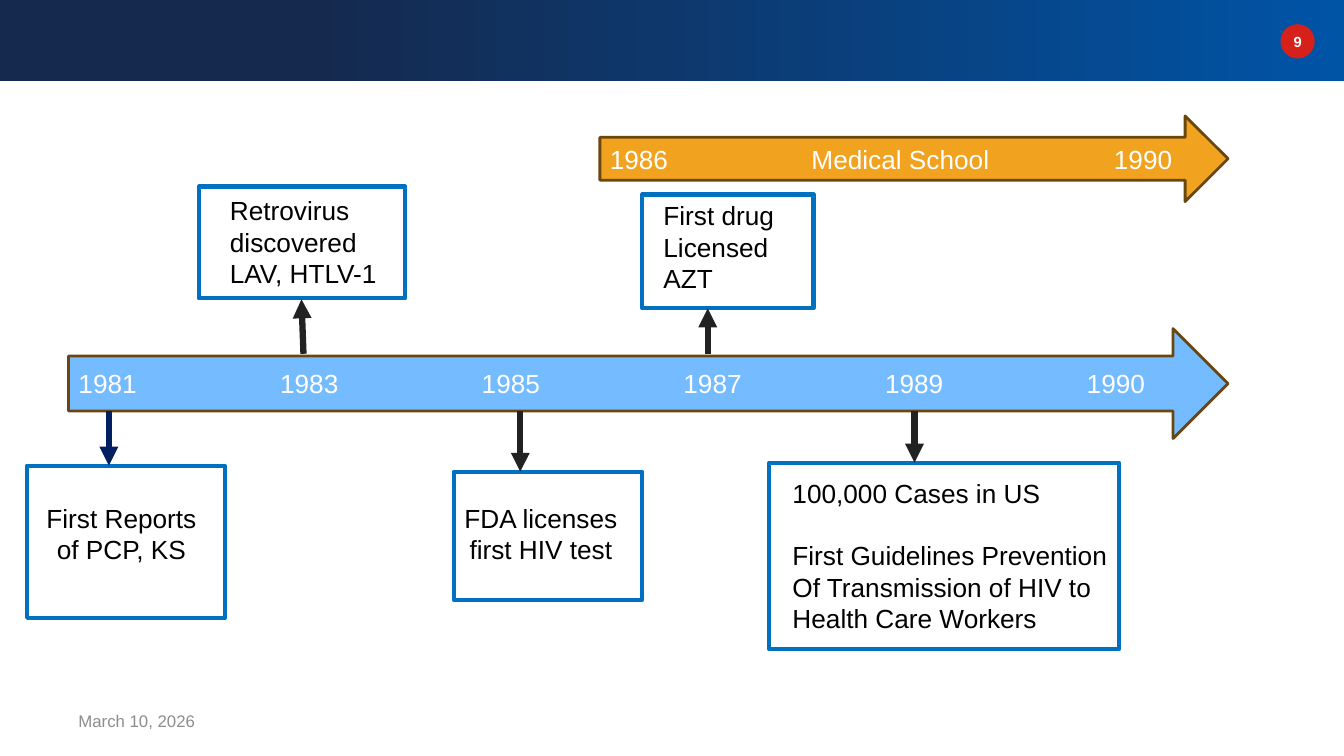
from lxml import etree
from pptx import Presentation
from pptx.dml.color import RGBColor
from pptx.enum import shapes as sh, text as tx
from pptx.oxml.ns import qn
from pptx.util import Inches, Pt

BODY_SIZE = 18.7
BLACK, WHITE, INK = "000000", "FFFFFF", "222222"
AXIS_TOP, AXIS_BOTTOM = 3.51, 4.08
LEFT, CENTER = tx.PP_ALIGN.LEFT, tx.PP_ALIGN.CENTER


def rgb(value):
    return RGBColor.from_string(value)


def add_shape(slide, kind, at, fill=None, line=None, width=0):
    shape = slide.shapes.add_shape(kind, *map(Inches, at))
    shape.shadow.inherit = False
    if fill:
        shape.fill.solid()
        shape.fill.fore_color.rgb = rgb(fill)
    else:
        shape.fill.background()
    if line:
        shape.line.color.rgb = rgb(line)
        shape.line.width = Pt(width)
    else:
        shape.line.fill.background()
    return shape


def write(shape, lines, size, color, align=LEFT, anchor=tx.MSO_ANCHOR.MIDDLE,
          margins=(0.1, 0.05, 0.1, 0.05), bold=False):
    frame = shape.text_frame
    frame.word_wrap = True
    frame.vertical_anchor = anchor
    (frame.margin_left, frame.margin_top,
     frame.margin_right, frame.margin_bottom) = map(Inches, margins)
    frame.text = "\n".join(lines)
    for paragraph in frame.paragraphs:
        paragraph.alignment = align
        font = paragraph.font
        font.name, font.size, font.bold = "Arial", Pt(size), bold
        font.color.rgb = rgb(color)
    return frame


def add_header(slide, number):
    band = add_shape(slide, sh.MSO_SHAPE.RECTANGLE, (0, 0, 13.33, 0.8))
    band.fill.gradient()
    band.fill.gradient_angle = 0
    stops = ((0.23, "15294E"), (1, "0054A6"))
    for stop, (position, color) in zip(band.fill.gradient_stops, stops):
        stop.position = position
        stop.color.rgb = rgb(color)
    badge = add_shape(slide, sh.MSO_SHAPE.OVAL, (12.7, 0.24, 0.34, 0.34), "D6201A")
    write(badge, [number], 10.5, WHITE, CENTER, margins=(0, 0, 0, 0), bold=True)


def add_date(slide, date):
    box = slide.shapes.add_textbox(*map(Inches, (0.68, 6.95, 3, 0.4)))
    write(box, [date], 12, "8D8D8D")


def add_period(slide, at, fill, labels, tab_stops):
    """Block arrow whose labels sit on tab stops."""
    arrow = add_shape(slide, sh.MSO_SHAPE.RIGHT_ARROW, at, fill, "6A470E", 2)
    arrow.text_frame.text = "\t".join(labels)
    properties = arrow.text_frame.paragraphs[0]._p.get_or_add_pPr()
    tabs = etree.SubElement(properties, qn("a:tabLst"))
    for stop in tab_stops:
        etree.SubElement(tabs, qn("a:tab"), pos=str(Inches(stop)), algn="l")
    frame = arrow.text_frame
    frame.word_wrap = True
    frame.vertical_anchor = tx.MSO_ANCHOR.MIDDLE
    paragraph = frame.paragraphs[0]
    paragraph.alignment = LEFT
    paragraph.font.name, paragraph.font.size = "Arial", Pt(BODY_SIZE)
    paragraph.font.color.rgb = rgb(WHITE)


def add_event(slide, at, lines, margins, align=LEFT):
    box = add_shape(slide, sh.MSO_SHAPE.RECTANGLE, at, None, "0070C0", 3)
    return write(box, lines, BODY_SIZE, BLACK, align, tx.MSO_ANCHOR.TOP,
                 (*margins, 0))


def add_pointer(slide, start, end, color=INK):
    pointer = slide.shapes.add_connector(
        sh.MSO_CONNECTOR.STRAIGHT, *map(Inches, (*start, *end)))
    pointer.line.color.rgb = rgb(color)
    pointer.line.width = Pt(4.5)
    etree.SubElement(pointer.line._get_or_add_ln(), qn("a:tailEnd"), type="triangle")
    etree.SubElement(pointer._element.spPr, qn("a:effectLst"))


def main():
    prs = Presentation()
    prs.slide_width, prs.slide_height = Inches(13.33), Inches(7.5)
    slide = prs.slides.add_slide(prs.slide_layouts[6])

    # Header and date
    add_header(slide, "9")
    add_date(slide, "March 10, 2026")

    # Main time axis, one label every two inches
    years = ["1981", "1983", "1985", "1987", "1989", "1990"]
    add_period(slide, (0.68, 3.26, 11.5, 1.09), "75BBFF", years, range(2, 11, 2))

    # Events: box, lines, left/top/right margins, alignment
    add_event(slide, (0.27, 4.62, 1.96, 1.51),
              ["First Reports", "of PCP, KS"], (0, 0.36, 0.09), CENTER)
    add_event(slide, (1.97, 1.85, 2.05, 1.11),
              ["Retrovirus", "discovered", "LAV, HTLV-1"], (0.31, 0.08, 0))
    add_event(slide, (4.5, 4.68, 1.87, 1.27),
              ["FDA licenses", "first HIV test"], (0, 0.3, 0.14), CENTER)
    add_event(slide, (6.37, 1.93, 1.7, 1.13),
              ["First drug", "Licensed", "AZT"], (0.21, 0.05, 0))
    guidelines = add_event(
        slide, (7.63, 4.59, 3.47, 1.85),
        ["100,000 Cases in US", "First Guidelines Prevention",
         "Of Transmission of HIV to", "Health Care Workers"], (0.23, 0.14, 0))
    guidelines.paragraphs[1].space_before = Pt(22.4)

    # Pointers from the axis to the events
    add_pointer(slide, (1.08, AXIS_BOTTOM), (1.08, 4.62), "002060")
    add_pointer(slide, (3.01, AXIS_TOP), (2.99, 2.97))
    add_pointer(slide, (5.16, AXIS_BOTTOM), (5.16, 4.68))
    add_pointer(slide, (7.02, AXIS_TOP), (7.02, 3.06))
    add_pointer(slide, (9.07, AXIS_BOTTOM), (9.07, 4.59))

    # Parallel period
    add_period(slide, (5.95, 1.15, 6.23, 0.85), "F1A21F",
               ["1986", "Medical School", "1990"], (2, 5))

    prs.save("out.pptx")


if __name__ == "__main__":
    main()
